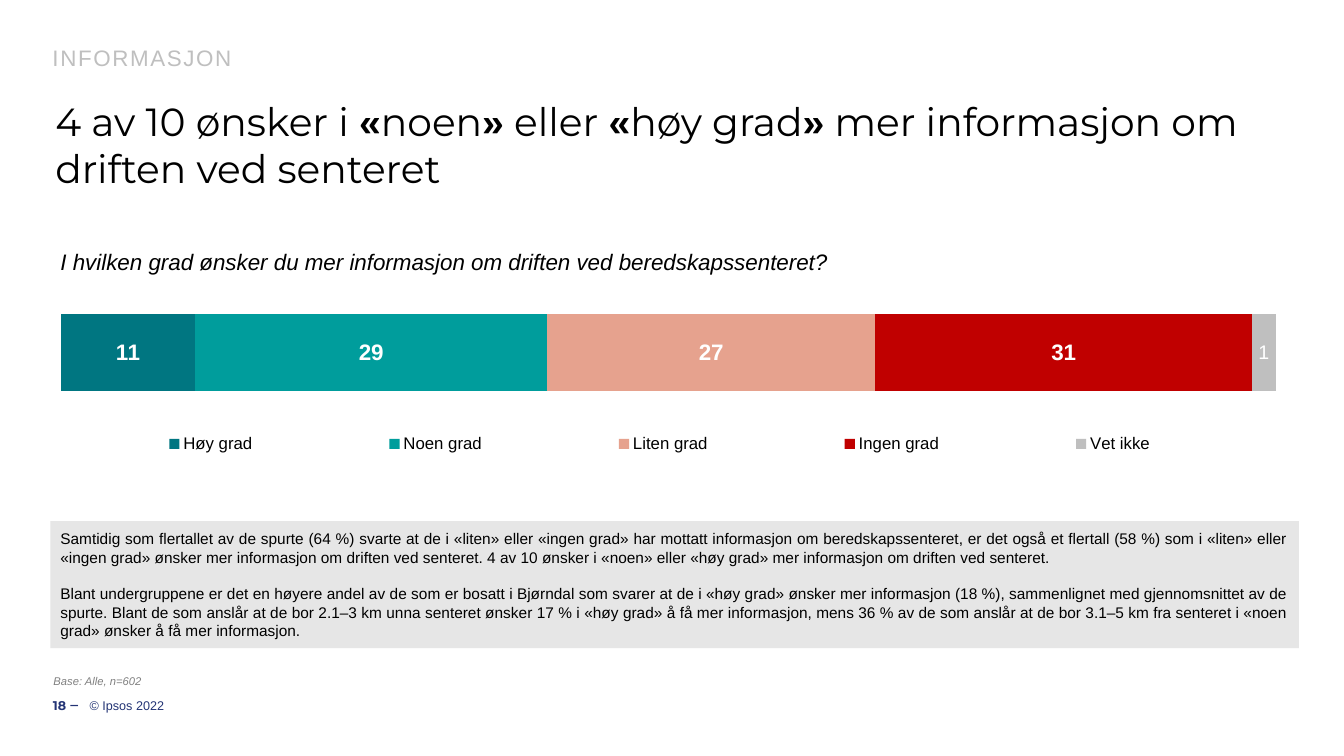
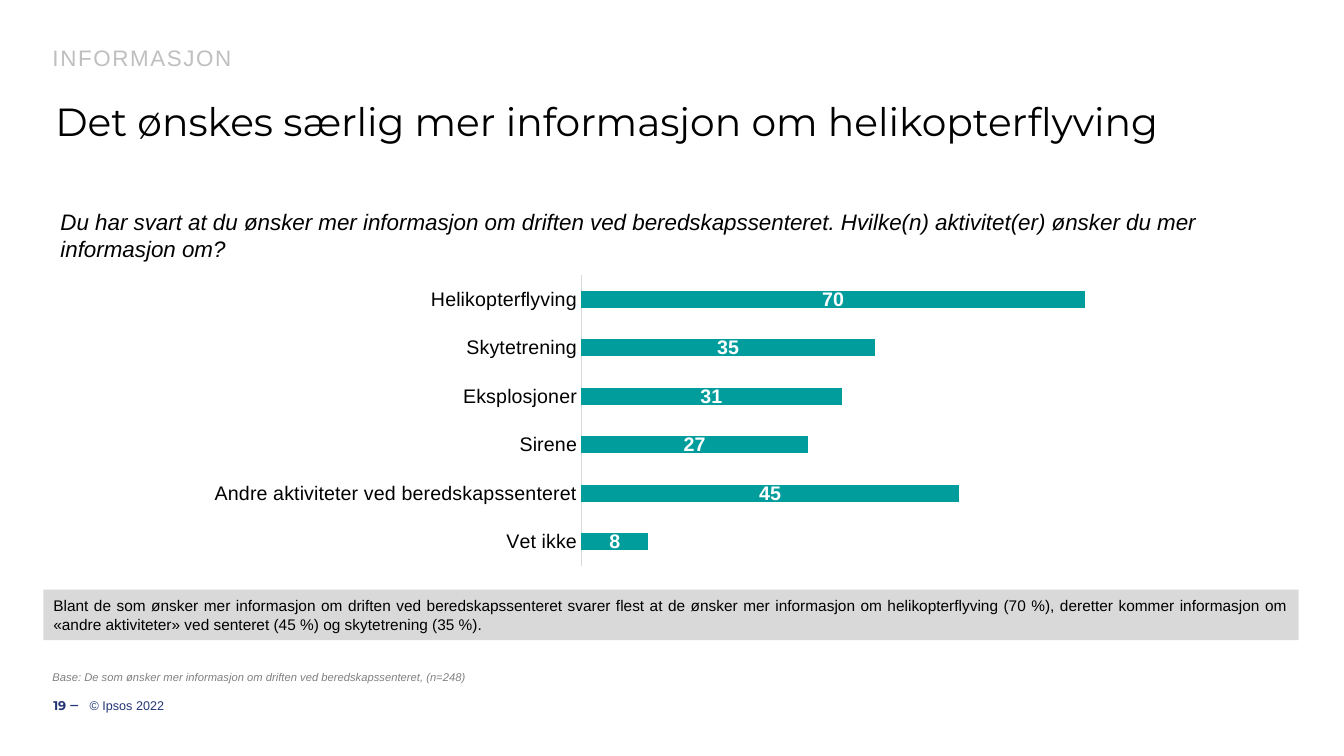
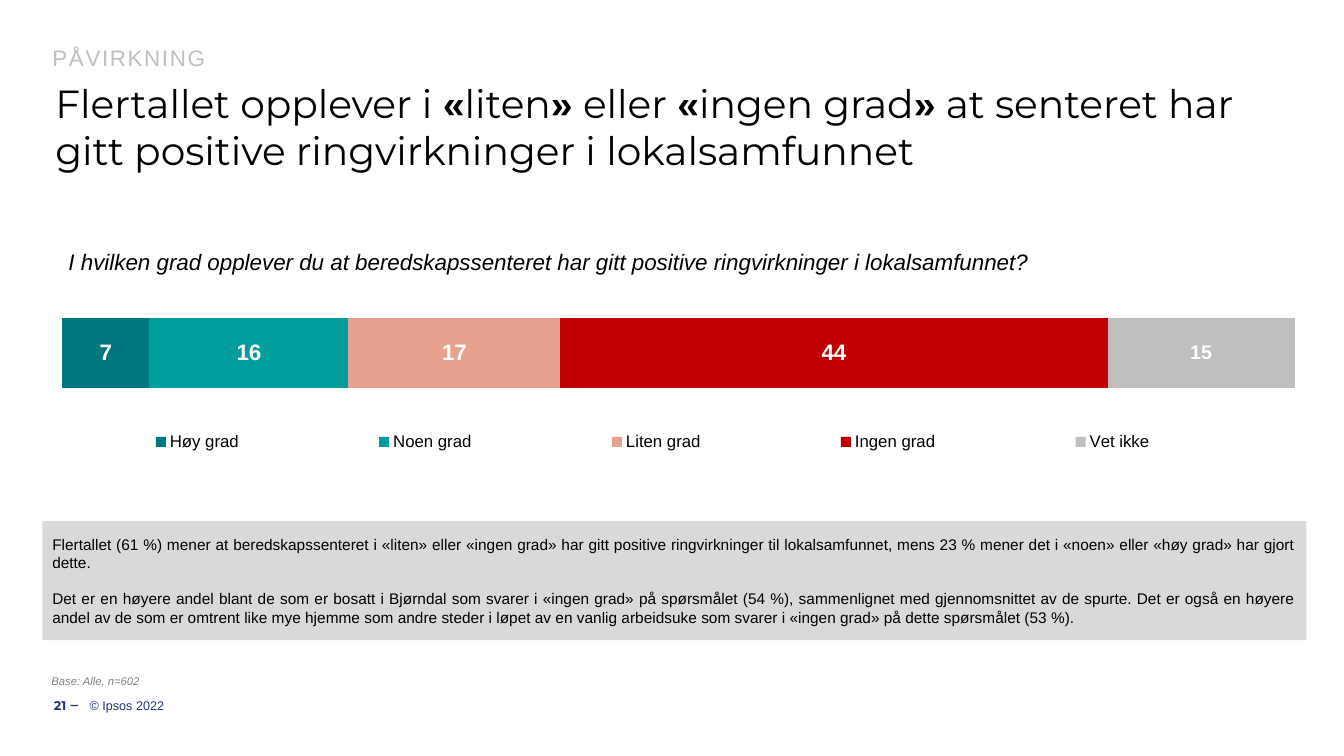
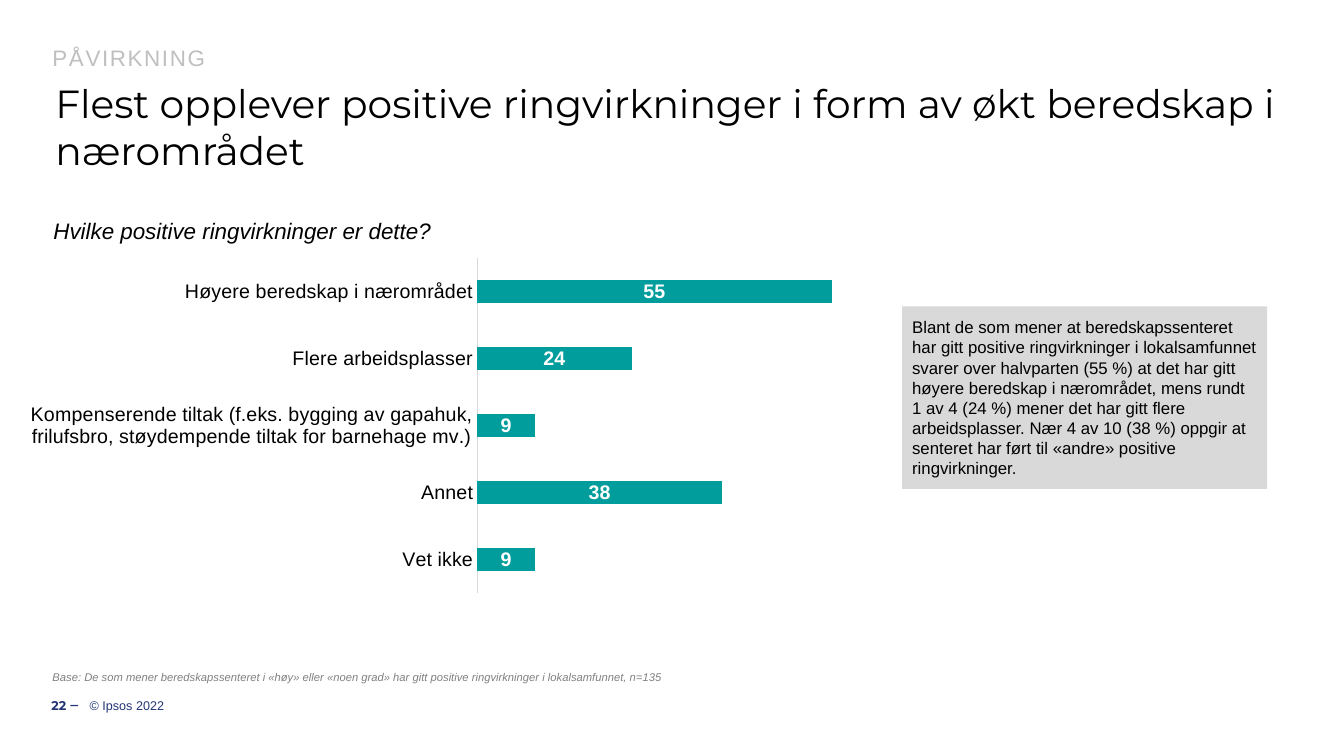
from dataclasses import dataclass
from itertools import groupby
from typing import NamedTuple, Optional

import pptx
import pptx.chart.data
import pptx.dml.color
import pptx.enum.chart
import pptx.enum.shapes
import pptx.enum.text
import pptx.oxml
import pptx.oxml.ns
import pptx.util

Inches = pptx.util.Inches
Pt = pptx.util.Pt
qn = pptx.oxml.ns.qn
Anchor = pptx.enum.text.MSO_ANCHOR
Align = pptx.enum.text.PP_ALIGN
ChartType = pptx.enum.chart.XL_CHART_TYPE

SLIDE_W, SLIDE_H = Inches(13.333), Inches(7.5)
BLACK, WHITE, NAVY = "000000", "FFFFFF", "233475"
SILVER, GREY, RULE = "BFBFBF", "808080", "D9D9D9"
PETROL, TEAL, SALMON, RED = "007681", "009D9C", "E6A28E", "C00000"
TITLE_ONLY = 5


class Box(NamedTuple):
    """Left, top, width and height in percent of the slide's size."""
    x: float
    y: float
    w: float
    h: float


class Layout(NamedTuple):
    """Left, top, width and height as shares of a chart's size."""
    x: float
    y: float
    w: float
    h: float


class Style(NamedTuple):
    size: float
    color: str = BLACK
    font: str = "Arial"
    bold: bool = False
    italic: bool = False


class Grade(NamedTuple):
    name: str
    color: str
    label_size: int


TITLE = Style(16, SILVER)
HEADLINE = Style(28, font="Montserrat")
QUOTE_MARK = Style(28, bold=True)
QUESTION = Style(16, italic=True)
BASE = Style(8, GREY, italic=True)
PAGE = Style(9, NAVY, "Montserrat", bold=True)
COPYRIGHT = Style(9, NAVY)

TITLE_BOX = Box(3.3, 5.6, 93.4, 4.53)
PAGE_BOX = Box(3.15, 90.67, 2.7, 5.33)
COPYRIGHT_BOX = Box(6.67, 90.67, 85.73, 5.33)

GRADES = [
    Grade("Høy grad", PETROL, 16),
    Grade("Noen grad", TEAL, 16),
    Grade("Liten grad", SALMON, 16),
    Grade("Ingen grad", RED, 16),
    Grade("Vet ikke", SILVER, 14),
]


@dataclass
class GradeChart:
    """One bar split by grade, with a legend under it."""
    box: Box
    plot: Layout
    legend: Layout
    values: list[int]
    last_label: str = ""


@dataclass
class AnswerChart:
    """One bar for each answer, listed from the top down."""
    box: Box
    answers: dict[str, int]


@dataclass
class Note:
    box: Box
    paragraphs: list[str]
    fill: str = RULE
    size: int = 11
    align: Optional[Align] = Align.JUSTIFY


@dataclass
class Page:
    number: int
    title: str
    headline: str
    headline_box: Box
    question: str
    question_box: Box
    base: str
    base_box: Box
    chart: GradeChart | AnswerChart
    note: Note


def rgb(value: str) -> pptx.dml.color.RGBColor:
    return pptx.dml.color.RGBColor.from_string(value)


def place(box: Box) -> tuple[int, int, int, int]:
    return (int(SLIDE_W * box.x / 100), int(SLIDE_H * box.y / 100),
            int(SLIDE_W * box.w / 100), int(SLIDE_H * box.h / 100))


def set_font(font, style: Style) -> None:
    font.size, font.name = Pt(style.size), style.font
    font.bold, font.italic = style.bold, style.italic
    font.color.rgb = rgb(style.color)


def set_frame(tf, anchor=Anchor.TOP, left=0.08, right=0.08, bottom=0.05) -> None:
    tf.word_wrap = True
    tf.vertical_anchor = anchor
    tf.margin_left, tf.margin_right = Inches(left), Inches(right)
    tf.margin_top, tf.margin_bottom = Inches(0.05), Inches(bottom)


def add_text(slide, box: Box, text: str, style: Style, align=None, **frame) -> None:
    tf = slide.shapes.add_textbox(*place(box)).text_frame
    set_frame(tf, **frame)
    p = tf.paragraphs[0]
    p.text, p.alignment = text, align
    set_font(p.runs[0].font, style)


def add_title(slide, text: str) -> None:
    sp = slide.shapes.title
    sp.left, sp.top, sp.width, sp.height = place(TITLE_BOX)
    tf = sp.text_frame
    tf.text = text
    tf.auto_size = pptx.enum.text.MSO_AUTO_SIZE.NONE
    set_frame(tf)
    p = tf.paragraphs[0]
    p.alignment, p.line_spacing = Align.LEFT, 0.9
    r = p.runs[0]
    set_font(r.font, TITLE)
    r.font._element.set("spc", "120")


def add_headline(slide, box: Box, text: str) -> None:
    """Sets the quotation marks in a bold face of their own."""
    tf = slide.shapes.add_textbox(*place(box)).text_frame
    set_frame(tf, left=0.1, right=0.1)
    for is_mark, chars in groupby(text, lambda char: char in "«»"):
        r = tf.paragraphs[0].add_run()
        r.text = "".join(chars)
        set_font(r.font, QUOTE_MARK if is_mark else HEADLINE)


def add_note(slide, note: Note) -> None:
    sp = slide.shapes.add_shape(pptx.enum.shapes.MSO_SHAPE.RECTANGLE, *place(note.box))
    sp.shadow.inherit = False
    sp.fill.solid()
    sp.fill.fore_color.rgb = rgb(note.fill)
    sp.line.fill.background()
    tf = sp.text_frame
    set_frame(tf, Anchor.MIDDLE, left=0.1, right=0.1)
    tf.text = "\n".join(note.paragraphs)
    for i, p in enumerate(tf.paragraphs):
        p.alignment = note.align
        if i:
            p.space_before = Pt(12.6)
        set_font(p.runs[0].font, Style(note.size))


def set_layout(parent, index: int, layout: Layout, inner: bool = False) -> None:
    """Fixes the place of a plot area or a legend within its chart."""
    for old in parent.findall(qn("c:layout")):
        parent.remove(old)
    target = '<c:layoutTarget val="inner"/>' if inner else ""
    modes = '<c:xMode val="edge"/><c:yMode val="edge"/>'
    sizes = "".join(f'<c:{key} val="{value}"/>' for key, value in layout._asdict().items())
    parent.insert(index, pptx.oxml.parse_xml(
        f'<c:layout {pptx.oxml.ns.nsdecls("c")}><c:manualLayout>'
        f"{target}{modes}{sizes}</c:manualLayout></c:layout>"))


def add_bars(slide, box: Box, kind, data, gap: int, plot_layout: Layout):
    chart = slide.shapes.add_chart(kind, *place(box), data).chart
    chart.has_title = chart.has_legend = False
    set_font(chart.font, Style(10))
    plot = chart.plots[0]
    plot.gap_width, plot.overlap, plot.vary_by_categories = gap, 100, False
    chart.value_axis.visible = False
    chart.value_axis.has_major_gridlines = False
    set_layout(chart._chartSpace.chart.plotArea, 0, plot_layout, inner=True)
    return chart


def format_series(series, color: str, label_size: int) -> None:
    series.format.fill.solid()
    series.format.fill.fore_color.rgb = rgb(color)
    labels = series.data_labels
    labels.show_value = True
    labels.position = pptx.enum.chart.XL_LABEL_POSITION.CENTER
    set_font(labels.font, Style(label_size, WHITE, bold=True))


def add_grade_chart(slide, spec: GradeChart) -> None:
    data = pptx.chart.data.CategoryChartData()
    data.categories = ["1"]
    for grade, value in zip(GRADES, spec.values):
        data.add_series(grade.name, [value])
    chart = add_bars(slide, spec.box, ChartType.BAR_STACKED_100, data, 104, spec.plot)
    chart.category_axis.visible = False
    chart.value_axis.major_unit = 0.2
    for grade, series in zip(GRADES, chart.plots[0].series):
        format_series(series, grade.color, grade.label_size)
    if spec.last_label:
        tf = series.points[0].data_label.text_frame
        tf.text = spec.last_label
        set_font(tf.paragraphs[0].runs[0].font, Style(14, WHITE))
    chart.has_legend = True
    legend = chart.legend
    legend.position = pptx.enum.chart.XL_LEGEND_POSITION.BOTTOM
    legend.include_in_layout = False
    set_font(legend.font, Style(12))
    set_layout(legend._element, 1, spec.legend)


def add_answer_chart(slide, spec: AnswerChart) -> None:
    data = pptx.chart.data.CategoryChartData()
    data.categories = list(reversed(spec.answers))
    data.add_series("Series 1", list(reversed(spec.answers.values())))
    chart = add_bars(slide, spec.box, ChartType.BAR_STACKED, data, 182,
                     Layout(0.531, 0.057, 0.435, 0.864))
    value_axis, axis = chart.value_axis, chart.category_axis
    value_axis.minimum_scale, value_axis.maximum_scale = 0, 60
    value_axis.major_unit = 20
    axis.major_tick_mark = pptx.enum.chart.XL_TICK_MARK.NONE
    axis.format.line.color.rgb = rgb(RULE)
    axis.format.line.width = Pt(0.75)
    set_font(axis.tick_labels.font, Style(14))
    format_series(chart.plots[0].series[0], TEAL, 14)


def add_page(prs, page: Page) -> None:
    slide = prs.slides.add_slide(prs.slide_layouts[TITLE_ONLY])
    add_title(slide, page.title)
    if isinstance(page.chart, GradeChart):
        add_grade_chart(slide, page.chart)
    else:
        add_answer_chart(slide, page.chart)
    add_headline(slide, page.headline_box, page.headline)
    add_text(slide, page.question_box, page.question, QUESTION, bottom=0)
    add_note(slide, page.note)
    add_text(slide, page.base_box, page.base, BASE, anchor=Anchor.BOTTOM, right=0)
    add_text(slide, PAGE_BOX, f"{page.number} ‒", PAGE, Align.RIGHT,
             anchor=Anchor.MIDDLE, left=0, right=0)
    add_text(slide, COPYRIGHT_BOX, "© Ipsos 2022", COPYRIGHT,
             anchor=Anchor.MIDDLE, left=0, right=0)


PAGES = [
    Page(
        18, "INFORMASJON",
        "4 av 10 ønsker i «noen» eller «høy grad» mer informasjon om driften ved senteret",
        Box(3.38, 12.27, 92.7, 13.87),
        "I hvilken grad ønsker du mer informasjon om driften ved beredskapssenteret?",
        Box(3.9, 32.13, 66.15, 4.27),
        "Base: Alle, n=602", Box(3.38, 88.4, 94.05, 3.2),
        GradeChart(Box(0.98, 31.07, 96.98, 44.53), Layout(0.037, 0.117, 0.932, 0.467),
                   Layout(0.019, 0.576, 0.954, 0.09), [11, 29, 27, 31, 2], "1"),
        Note(Box(3.75, 68.93, 92.9, 16.8), [
            "Samtidig som flertallet av de spurte (64 %) svarte at de i «liten» eller "
            "«ingen grad» har mottatt informasjon om beredskapssenteret, er det også et "
            "flertall (58 %) som i «liten» eller «ingen grad» ønsker mer informasjon om "
            "driften ved senteret. 4 av 10 ønsker i «noen» eller «høy grad» mer "
            "informasjon om driften ved senteret.",
            "Blant undergruppene er det en høyere andel av de som er bosatt i Bjørndal "
            "som svarer at de i «høy grad» ønsker mer informasjon (18 %), sammenlignet "
            "med gjennomsnittet av de spurte. Blant de som anslår at de bor 2.1–3 km "
            "unna senteret ønsker 17 % i «høy grad» å få mer informasjon, mens 36 % av "
            "de som anslår at de bor 3.1–5 km fra senteret i «noen grad» ønsker å få "
            "mer informasjon.",
        ], fill="E6E6E6"),
    ),
    Page(
        19, "INFORMASJON",
        "Det ønskes særlig mer informasjon om helikopterflyving",
        Box(3.38, 12.27, 95, 7.6),
        "Du har svart at du ønsker mer informasjon om driften ved beredskapssenteret. "
        "Hvilke(n) aktivitet(er) ønsker du mer informasjon om?",
        Box(3.9, 26.93, 89.8, 7.87),
        "Base: De som ønsker mer informasjon om driften ved beredskapssenteret, (n=248)",
        Box(3.3, 87.87, 94.05, 3.2),
        AnswerChart(Box(-2.55, 33.87, 86.25, 44.53), {
            "Helikopterflyving": 70,
            "Skytetrening": 35,
            "Eksplosjoner": 31,
            "Sirene": 27,
            "Andre aktiviteter ved beredskapssenteret": 45,
            "Vet ikke": 8,
        }),
        Note(Box(3.23, 78, 93.4, 6.67), [
            "Blant de som ønsker mer informasjon om driften ved beredskapssenteret "
            "svarer flest at de ønsker mer informasjon om helikopterflyving (70 %), "
            "deretter kommer informasjon om «andre aktiviteter» ved senteret (45 %) og "
            "skytetrening (35 %).",
        ]),
    ),
    Page(
        21, "PÅVIRKNING",
        "Flertallet opplever i «liten» eller «ingen grad» at senteret har gitt positive "
        "ringvirkninger i lokalsamfunnet",
        Box(3.38, 9.87, 94.5, 13.87),
        "I hvilken grad opplever du at beredskapssenteret har gitt positive "
        "ringvirkninger i lokalsamfunnet?",
        Box(4.5, 32.13, 83.85, 5.73),
        "Base: Alle, n=602", Box(3.23, 88.4, 94.05, 3.2),
        GradeChart(Box(0, 34.27, 98.4, 40.13), Layout(0.047, 0.076, 0.932, 0.467),
                   Layout(0.016, 0.558, 0.955, 0.09), [7, 16, 17, 44, 15]),
        Note(Box(3.15, 68.93, 94.05, 15.73), [
            "Flertallet (61 %) mener at beredskapssenteret i «liten» eller «ingen grad» "
            "har gitt positive ringvirkninger til lokalsamfunnet, mens 23 % mener det i "
            "«noen» eller «høy grad» har gjort dette.",
            "Det er en høyere andel blant de som er bosatt i Bjørndal som svarer i "
            "«ingen grad» på spørsmålet (54 %), sammenlignet med gjennomsnittet av de "
            "spurte. Det er også en høyere andel av de som er omtrent like mye hjemme "
            "som andre steder i løpet av en vanlig arbeidsuke som svarer i «ingen grad» "
            "på dette spørsmålet (53 %).",
        ]),
    ),
    Page(
        22, "PÅVIRKNING",
        "Flest opplever positive ringvirkninger i form av økt beredskap i nærområdet",
        Box(3.38, 9.87, 94.5, 13.87),
        "Hvilke positive ringvirkninger er dette?",
        Box(3.38, 28, 66.15, 4.27),
        "Base: De som mener beredskapssenteret i «høy» eller «noen grad» har gitt "
        "positive ringvirkninger i lokalsamfunnet, n=135",
        Box(3.3, 87.87, 94.05, 3.2),
        AnswerChart(Box(0.38, 31.2, 66.15, 51.33), {
            "Høyere beredskap i nærområdet": 55,
            "Flere arbeidsplasser": 24,
            "Kompenserende tiltak (f.eks. bygging av gapahuk, frilufsbro, "
            "støydempende tiltak for barnehage mv.)": 9,
            "Annet": 38,
            "Vet ikke": 9,
        }),
        Note(Box(67.13, 40.53, 27.15, 24.13), [
            "Blant de som mener at beredskapssenteret har gitt positive ringvirkninger "
            "i lokalsamfunnet svarer over halvparten (55 %) at det har gitt høyere "
            "beredskap i nærområdet, mens rundt 1 av 4 (24 %) mener det har gitt flere "
            "arbeidsplasser. Nær 4 av 10 (38 %) oppgir at senteret har ført til «andre» "
            "positive ringvirkninger.",
        ], size=12, align=Align.LEFT),
    ),
]


def main() -> None:
    prs = pptx.Presentation()
    prs.slide_width, prs.slide_height = SLIDE_W, SLIDE_H
    for page in PAGES:
        add_page(prs, page)
    prs.save("out.pptx")


if __name__ == "__main__":
    main()
